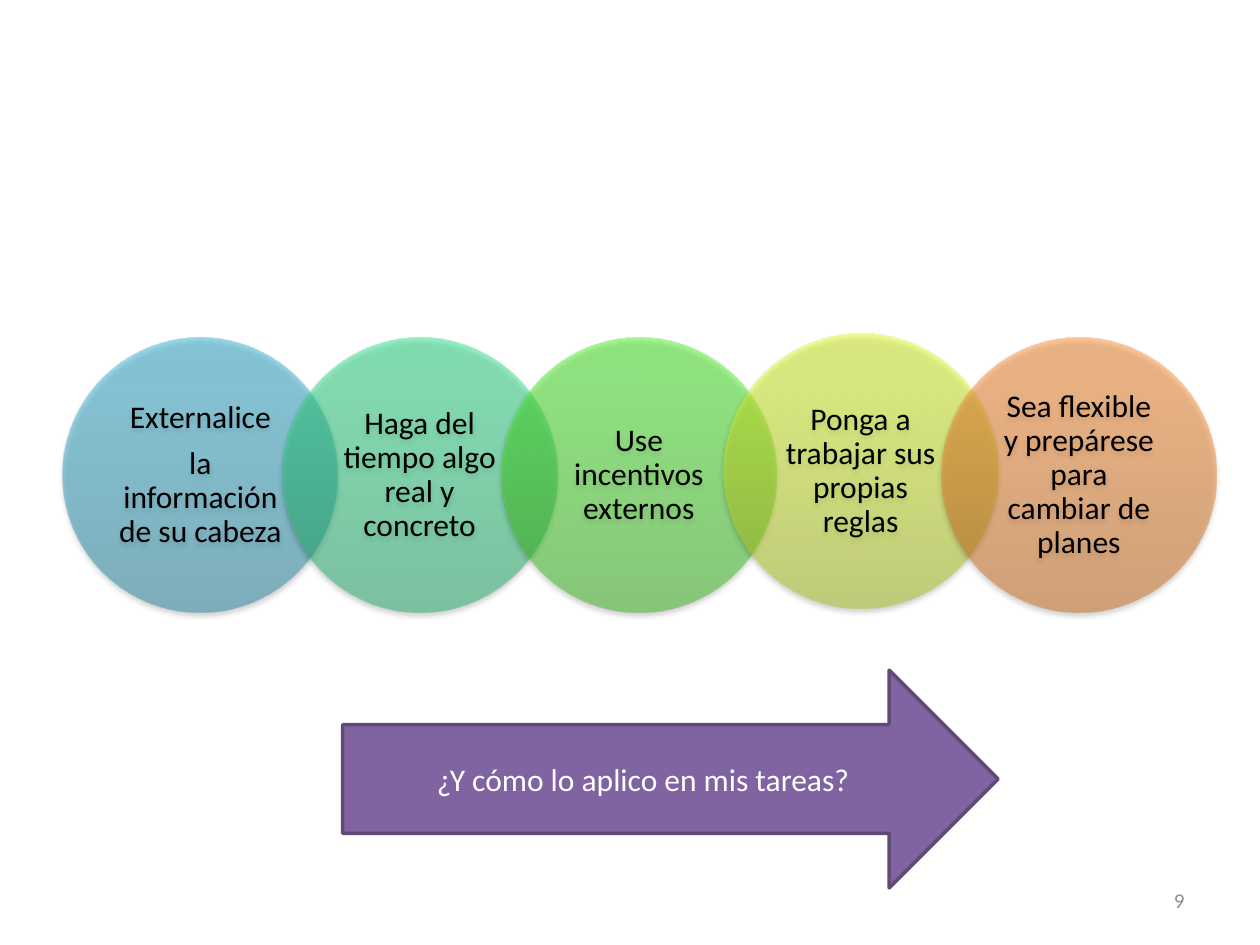
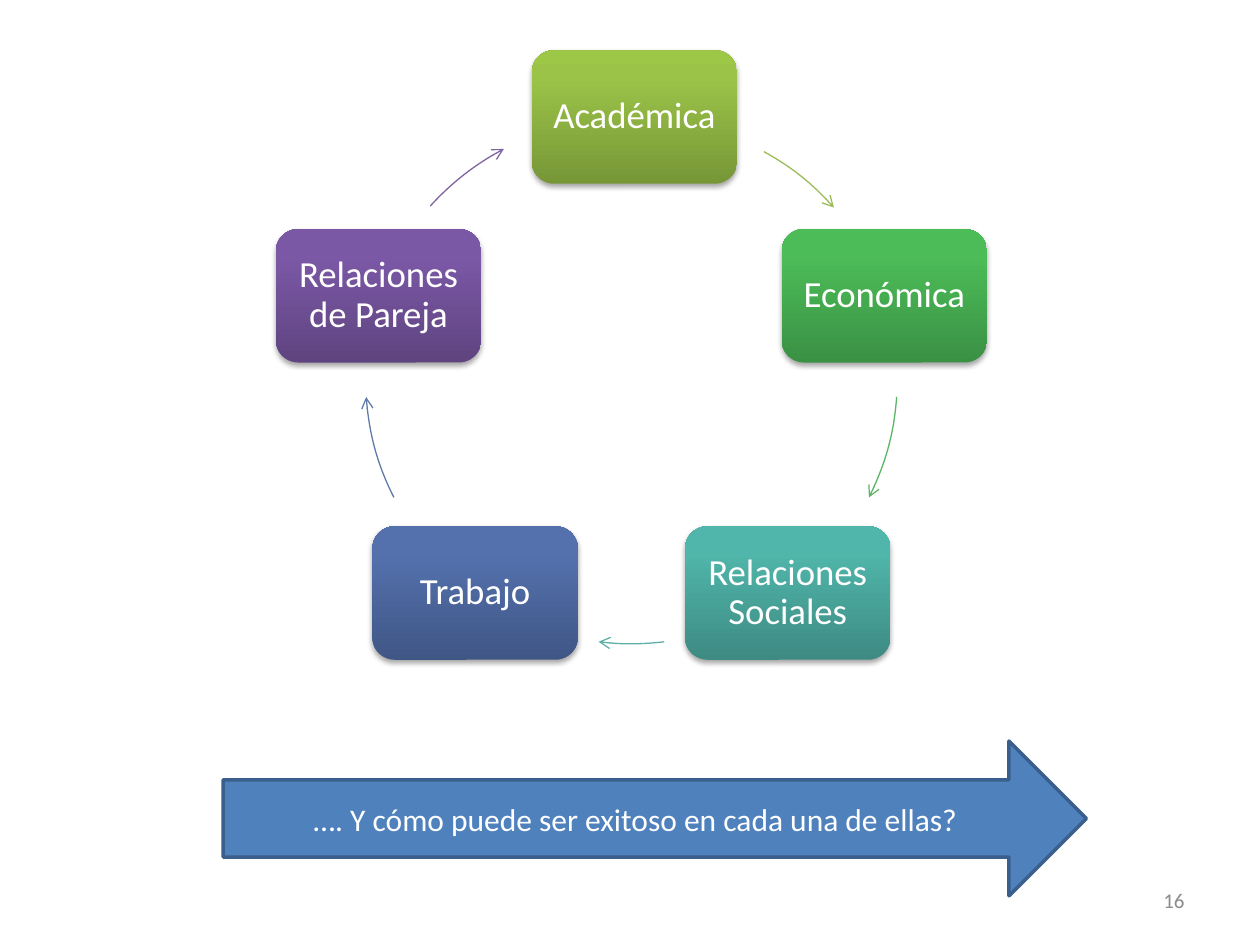
from math import cos, radians, sin

from pptx import Presentation
from pptx.dml.color import RGBColor
from pptx.enum.shapes import MSO_SHAPE as Preset
from pptx.enum.text import MSO_ANCHOR as Anchor, PP_ALIGN as Align
from pptx.oxml import parse_xml
from pptx.oxml.ns import nsdecls, qn
from pptx.util import Cm, Pt


def ramp(*codes):
    """Return the gradient colours, from the bottom of a shape to its top."""
    return [RGBColor.from_string(code) for code in codes]


BLACK = RGBColor(0x00, 0x00, 0x00)
WHITE = RGBColor(0xFF, 0xFF, 0xFF)
GREY = RGBColor(0x8C, 0x8C, 0x8C)
PURPLE = RGBColor(0x80, 0x64, 0xA2)
DARK_PURPLE = RGBColor(0x5F, 0x4A, 0x78)
BLUE = RGBColor(0x4F, 0x81, 0xBD)
DARK_BLUE = RGBColor(0x3A, 0x5F, 0x8C)
OLIVE = RGBColor(0x9B, 0xBB, 0x59)
GREEN = RGBColor(0x5C, 0xB5, 0x65)
TEAL = RGBColor(0x5E, 0xAF, 0xA6)
SLATE = RGBColor(0x61, 0x79, 0xA8)

BUBBLE_SIZE, BUBBLE_STEP = 5.54, 4.42
BUBBLES = [
    ("Externalice\nla información de su cabeza", ramp("2A88A2", "37B1D2", "34B4D6"), (0, 0)),
    ("Haga del tiempo algo real y concreto", ramp("26AE6D", "32E28D", "2EE68E"), (0, 0)),
    ("Use incentivos externos", ramp("3CB923", "4EF02E", "4CF52A"), (0, 0)),
    ("Ponga a trabajar sus propias reglas", ramp("ACC321", "DFFD2B", "E1FF2B"), (0.05, -0.08)),
    ("Sea flexible y prepárese para cambiar de planes", ramp("CC6E20", "FF9034", "FF9136"), (0.03, 0)),
]

RING_X, RING_Y, RING_RADIUS = 12.73, 7.62, 5.36
CARD_WIDTH, CARD_HEIGHT = 4.14, 2.69
CARDS = [
    ("Académica", ramp("779737", "9BC348", "9DC746"), (0.06, 0.1)),
    ("Económica", ramp("3A9144", "4CBC58", "4ABF57"), (0, 0)),
    ("Relaciones Sociales", ramp("3D8B83", "50B5AA", "4EB8AC"), (0, 0)),
    ("Trabajo", ramp("405786", "5471AE", "5271B0"), (0, 0)),
    ("Relaciones de Pareja", ramp("5F4480", "7B58A6", "7C57A8"), (0, 0)),
]
ARCS = [
    (298.9, 318.3, OLIVE, (0.08, 0.13)),
    (4.1, 26.7, GREEN, (0, 0)),
    (82.9, 97.1, TEAL, (0, 0)),
    (153.3, 175.9, SLATE, (0, 0)),
    (222.1, 242.3, PURPLE, (-0.08, 0.13)),
]


class Deck:
    """Holds the shared style and the current slide; lengths are centimetres."""

    font = "Calibri"

    def __init__(self, width, height):
        """Start an empty deck of the given size."""
        self.deck = Presentation()
        self.deck.slide_width, self.deck.slide_height = Cm(width), Cm(height)
        self.page = None

    def add_page(self, number):
        """Add a blank slide with its page number."""
        self.page = self.deck.slides.add_slide(self.deck.slide_layouts[6])
        box = self.page.shapes.add_textbox(Cm(18.2), Cm(17.65), Cm(5.93), Cm(1.01))
        self.label(box, number, 12, GREY, Align.RIGHT)

    def label(self, shape, text, size, color, align=Align.CENTER, spacing=None, insets=None):
        """Fill a shape with formatted text, centred vertically."""
        frame = shape.text_frame
        frame.text = text
        frame.word_wrap = True
        frame.vertical_anchor = Anchor.MIDDLE
        if insets:
            frame.margin_left = frame.margin_right = Cm(insets[0])
            frame.margin_top = frame.margin_bottom = Cm(insets[1])
        for para in frame.paragraphs:
            para.alignment = align
            if spacing:
                para.line_spacing = spacing
                para.space_after = Pt(size * 0.38)
            for span in para.runs:
                span.font.name, span.font.size = self.font, Pt(size)
                span.font.color.rgb = color

    def shape(self, preset, left, top, width, height):
        """Add a preset shape without a shadow."""
        shape = self.page.shapes.add_shape(preset, Cm(left), Cm(top), Cm(width), Cm(height))
        shape.shadow.inherit = False
        return shape

    def glossy(self, preset, left, top, width, height, colors, opacity=100):
        """Add a borderless shape with a vertical gradient and a soft shadow."""
        shape = self.shape(preset, left, top, width, height)
        shape.line.fill.background()
        stops = "".join(
            f'<a:gs pos="{place}000"><a:srgbClr val="{color}">'
            f'<a:alpha val="{opacity}000"/></a:srgbClr></a:gs>'
            for place, color in zip((0, 80, 100), colors))
        properties = shape.element.spPr
        properties.find(qn("a:prstGeom")).addnext(parse_xml(
            f'<a:gradFill {nsdecls("a")} rotWithShape="1"><a:gsLst>{stops}</a:gsLst>'
            '<a:lin ang="16200000" scaled="0"/></a:gradFill>'))
        properties.find(qn("a:effectLst")).append(parse_xml(
            f'<a:outerShdw {nsdecls("a")} blurRad="40000" dist="23000" dir="5400000" '
            'rotWithShape="0"><a:srgbClr val="000000"><a:alpha val="35000"/>'
            '</a:srgbClr></a:outerShdw>'))
        return shape

    def bubble(self, left, top, text, colors):
        """Add a translucent circle with black text."""
        shape = self.glossy(Preset.OVAL, left, top, BUBBLE_SIZE, BUBBLE_SIZE, colors, 50)
        self.label(shape, text, 18, BLACK, spacing=0.9, insets=(0.3, 0.08))

    def card(self, center_x, center_y, text, colors):
        """Add a rounded card around a centre."""
        shape = self.glossy(Preset.ROUNDED_RECTANGLE, center_x - CARD_WIDTH / 2,
                            center_y - CARD_HEIGHT / 2, CARD_WIDTH, CARD_HEIGHT, colors)
        self.label(shape, text, 21, WHITE, spacing=0.9, insets=(0.23, 0.23))

    def arc(self, center_x, center_y, start, end, color):
        """Add a clockwise arc with an arrowhead, its angles in degrees."""
        shape = self.shape(Preset.ARC, center_x - RING_RADIUS, center_y - RING_RADIUS,
                           2 * RING_RADIUS, 2 * RING_RADIUS)
        shape.adjustments[0], shape.adjustments[1] = start * 0.6, end * 0.6
        shape.fill.background()
        shape.line.color.rgb, shape.line.width = color, Pt(0.75)
        shape.element.spPr.find(qn("a:ln")).append(
            parse_xml(f'<a:tailEnd {nsdecls("a")} type="arrow"/>'))

    def banner(self, left, top, width, height, text, fill, edge):
        """Add a large arrow that carries a question."""
        shape = self.shape(Preset.RIGHT_ARROW, left, top, width, height)
        shape.fill.solid()
        shape.fill.fore_color.rgb = fill
        shape.line.color.rgb, shape.line.width = edge, Pt(2)
        self.label(shape, text, 18, WHITE)


def main():
    """Build both slides and save the deck."""
    deck = Deck(25.4, 19.05)

    deck.add_page("9")
    for index, (text, colors, (shift_x, shift_y)) in enumerate(BUBBLES):
        deck.bubble(1.27 + index * BUBBLE_STEP + shift_x, 6.81 + shift_y, text, colors)
    deck.banner(6.91, 13.51, 13.21, 4.39, "¿Y cómo lo aplico en mis tareas?", PURPLE, DARK_PURPLE)

    deck.add_page("16")
    for index, (text, colors, (shift_x, shift_y)) in enumerate(CARDS):
        turn = radians(index * 360 / len(CARDS))
        deck.card(RING_X + RING_RADIUS * sin(turn) + shift_x,
                  RING_Y - RING_RADIUS * cos(turn) + shift_y, text, colors)
    for start, end, color, (shift_x, shift_y) in ARCS:
        deck.arc(RING_X + shift_x, RING_Y + shift_y, start, end, color)
    deck.banner(4.5, 14.94, 17.4, 3.12, "…. Y cómo puede ser exitoso en cada una de ellas?",
                BLUE, DARK_BLUE)

    deck.deck.save("out.pptx")


if __name__ == "__main__":
    main()
